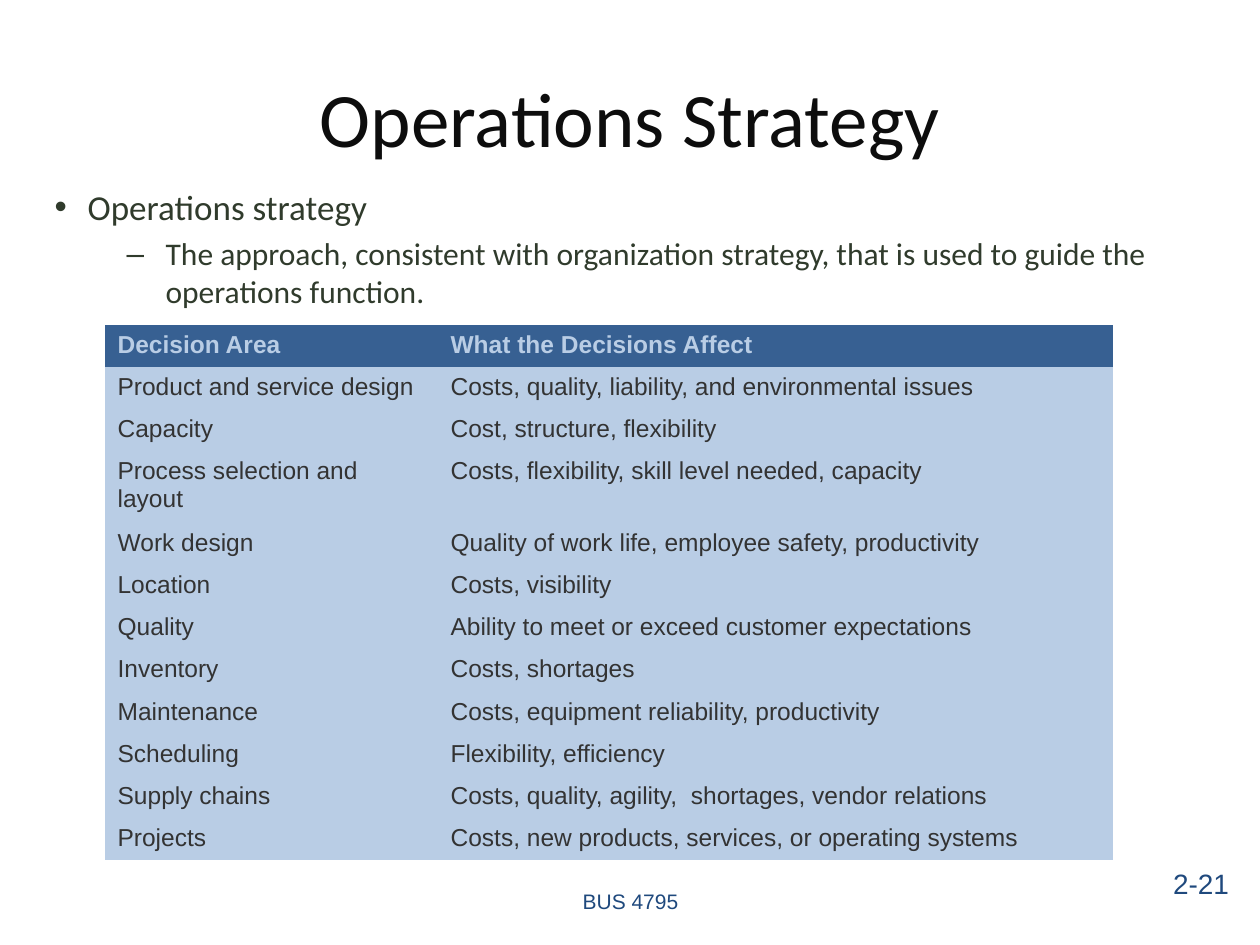
import pptx
import pptx.dml.color
import pptx.enum.text
import pptx.util

EMU_PER_PX = 914400 / 126
COLORS = {
    "title": "0D0D0D",
    "body": "303B2C",
    "footer": "1F497D",
    "header_fill": "376092",
    "row_fill": "B9CDE5",
    "cell_text": "333333",
}
ROWS = [
    ("Decision Area", "What the Decisions Affect"),
    ("Product and service design", "Costs, quality, liability, and environmental issues"),
    ("Capacity", "Cost, structure, flexibility"),
    ("Process selection and layout", "Costs, flexibility, skill level needed, capacity"),
    ("Work design", "Quality of work life, employee safety, productivity"),
    ("Location", "Costs, visibility"),
    ("Quality", "Ability to meet or exceed customer expectations"),
    ("Inventory", "Costs, shortages"),
    ("Maintenance", "Costs, equipment reliability, productivity"),
    ("Scheduling", "Flexibility, efficiency"),
    ("Supply chains", "Costs, quality, agility,  shortages, vendor relations"),
    ("Projects", "Costs, new products, services, or operating systems"),
]
COLUMN_WIDTHS = (333, 675)
ROW_HEIGHT = 42
TALL_ROW_HEIGHT = 72
TALL_ROW = 3
ALIGN = pptx.enum.text.PP_ALIGN
MIDDLE = pptx.enum.text.MSO_ANCHOR.MIDDLE


def emu(px):
    """Turn px into EMU."""
    return pptx.util.Emu(round(px * EMU_PER_PX))


def rgb(name):
    """Look up a named colour."""
    return pptx.dml.color.RGBColor.from_string(COLORS[name])


def place(shape, box):
    """Move and size a shape to a (left, top, width, height) box in px."""
    shape.left, shape.top, shape.width, shape.height = map(emu, box)


def write(para, text, *, size, color, font="Arial", bold=False, align=ALIGN.LEFT, before=0):
    """Put one formatted run in a paragraph."""
    para.alignment = align
    para.space_before = pptx.util.Pt(before)
    span = para.add_run()
    span.text = text
    span.font.name = font
    span.font.size = pptx.util.Pt(size)
    span.font.bold = bold
    span.font.color.rgb = rgb(color)


def add_title(page, box):
    """Fill the title placeholder."""
    title = page.shapes.title
    place(title, box)
    frame = title.text_frame
    frame.vertical_anchor = MIDDLE
    frame.auto_size = pptx.enum.text.MSO_AUTO_SIZE.NONE
    write(frame.paragraphs[0], "Operations Strategy", size=44, color="title",
          font="Calibri", align=ALIGN.CENTER)


def add_definition(page, box):
    """Fill the body placeholder with the two-level list."""
    body = page.placeholders[1]
    place(body, box)
    frame = body.text_frame
    frame.auto_size = pptx.enum.text.MSO_AUTO_SIZE.NONE
    items = [
        ("Operations strategy", 20, 0, 33, 33),
        ("The approach, consistent with organization strategy, that is used to guide "
         "the operations function.", 18, 4, 111, 39),
    ]
    for level, (text, size, before, margin, hanging) in enumerate(items):
        para = frame.add_paragraph() if level else frame.paragraphs[0]
        para.level = level
        properties = para._p.get_or_add_pPr()
        properties.set("marL", str(emu(margin)))
        properties.set("indent", str(-emu(hanging)))
        write(para, text, size=size, color="body", font="Calibri", before=before)


def add_decision_table(page, box):
    """Add the table of decision areas and their effects."""
    table = page.shapes.add_table(len(ROWS), len(COLUMN_WIDTHS), *map(emu, box)).table
    for column, width in zip(table.columns, COLUMN_WIDTHS):
        column.width = emu(width)
    for index, texts in enumerate(ROWS):
        header = index == 0
        table.rows[index].height = emu(TALL_ROW_HEIGHT if index == TALL_ROW else ROW_HEIGHT)
        for cell, text in zip(table.rows[index].cells, texts):
            cell.fill.solid()
            cell.fill.fore_color.rgb = rgb("header_fill" if header else "row_fill")
            write(cell.text_frame.paragraphs[0], text, size=14, bold=header,
                  color="row_fill" if header else "cell_text")
    table.horz_banding = False
    table.first_row = False
    style = table._tbl.tblPr.find(pptx.oxml.ns.qn("a:tableStyleId"))
    style.text = "{2D5ABB26-0587-4C30-8999-92F81FD0307C}"


def add_footer_text(page, box, text, size):
    """Add a centred line of footer text."""
    frame = page.shapes.add_textbox(*map(emu, box)).text_frame
    frame.word_wrap = True
    frame.vertical_anchor = MIDDLE
    frame.margin_left = frame.margin_right = 0
    frame.margin_top = frame.margin_bottom = 0
    write(frame.paragraphs[0], text, size=size, color="footer", align=ALIGN.CENTER)


def main():
    """Build the slide and save the deck."""
    deck = pptx.Presentation()
    deck.slide_width, deck.slide_height = emu(1260), emu(945)
    page = deck.slides.add_slide(deck.slide_layouts[1])
    add_title(page, (63, 38, 1134, 158))
    add_definition(page, (42, 179, 1134, 630))
    add_footer_text(page, (431, 876, 399, 50), "BUS 4795", 12)
    add_decision_table(page, (105, 325, sum(COLUMN_WIDTHS), 534))
    add_footer_text(page, (1159, 852, 84, 63), "2-21", 16)
    deck.save("out.pptx")


if __name__ == "__main__":
    main()
